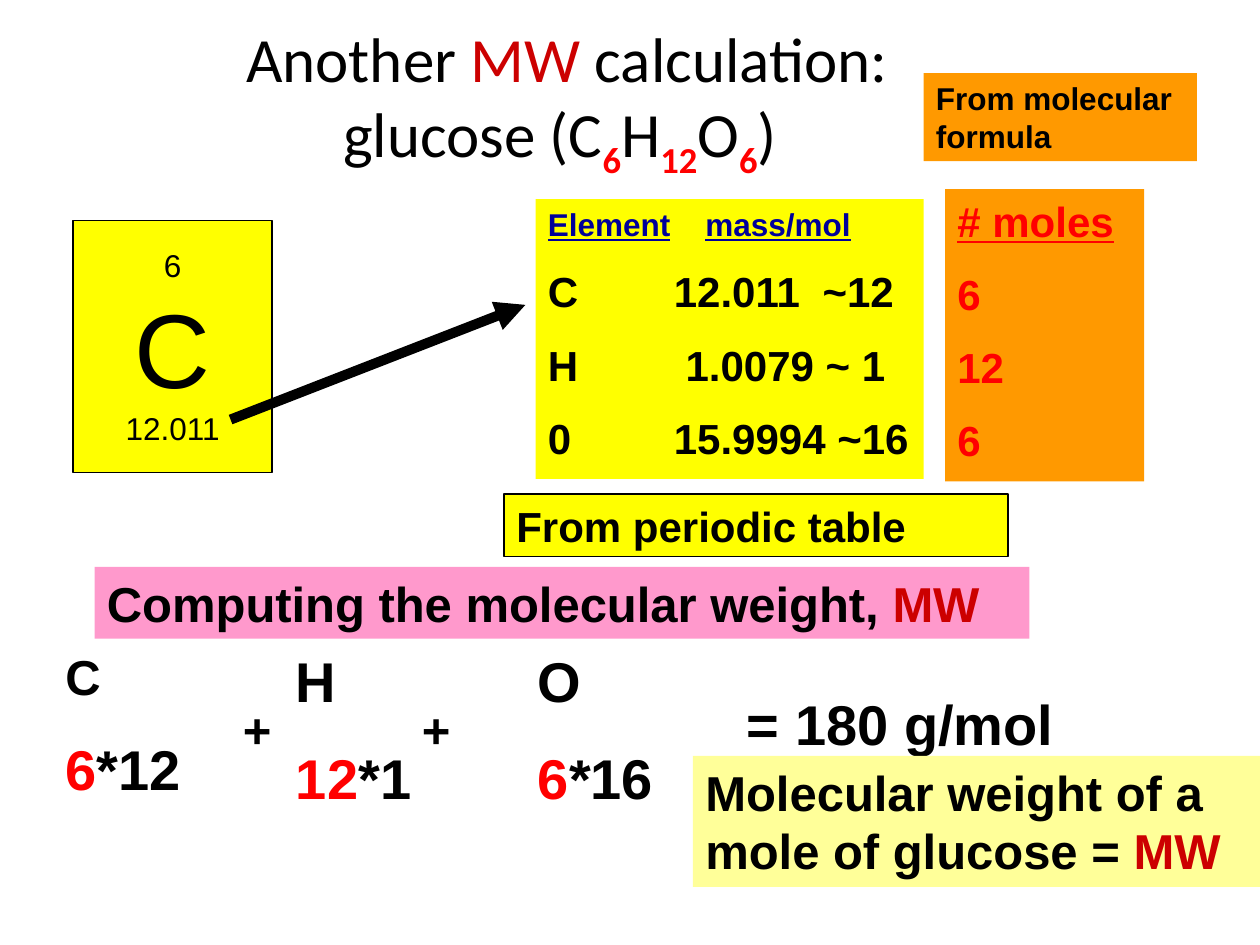
"""Build a slide that works out the molecular weight of glucose."""
from lxml import etree
from pptx import Presentation
from pptx import util as u
from pptx.dml.color import RGBColor
from pptx.enum import shapes, text
from pptx.oxml import ns

BLACK, RED, DARK_RED, NAVY = "000000", "FF0000", "CC0000", "000099"
YELLOW, ORANGE, PINK, CREAM = "FFFF00", "FF9900", "FF99CC", "FFFF99"
GAP_RATIO = 0.54

COUNT = {"color": RED, "bold": True, "baseline": -25000}
TITLE = [[("Another ", {}), ("MW", {"color": DARK_RED}),
          (" calculation:\vglucose (C", {}), ("6", COUNT), ("H", {}),
          ("12", COUNT), ("O", {}), ("6", COUNT), (") ", {})]]
MASSES = [
    [("Element\tmass/mol", {"size": 18, "color": NAVY, "underline": True})],
    [("C\t12.011\t~12", {})],
    [("H\t 1.0079 ~ 1", {})],
    [("0\t15.9994 ~16", {})],
]
MASS_TABS = [[1.25], [1, 2.18], [1], [1]]
MOLES = [[("# moles", {"underline": True})]] + [[(count, {})] for count in ("6", "12", "6")]
TILE = [[("6", {})], [("C", {"size": 60})], [("12.011", {})]]
TERMS = [
    ("C", 28, "6", "*12", (0.42, 4.58, 1.25, 1.92), 0.55),
    ("H", 32, "12", "*1", (2.25, 5.08, 1.25, 1.45), 0.05),
    ("O", 32, "6", "*16", (4.17, 5.08, 1.25, 1.45), 0.05),
]
PLUS_LEFTS = [3.25, 1.83]
MW = ("MW", {"color": DARK_RED})


def rgb(value):
    """Turn a hex string into a colour."""
    return RGBColor.from_string(value)


def set_tabs(paragraph, stops):
    """Give a paragraph its left tab stops, in inches."""
    tab_list = etree.SubElement(paragraph._p.get_or_add_pPr(), ns.qn("a:tabLst"))
    for stop in stops:
        etree.SubElement(tab_list, ns.qn("a:tab"), pos=str(u.Inches(stop)), algn="l")


def add_text(slide, box, paragraphs, size=24, font="Arial", color=BLACK, bold=True,
             fill=None, line=None, align="LEFT", anchor="TOP", wrap=True,
             top=0.05, tabs=()):
    """Add a box of formatted paragraphs, each a list of (text, format) runs."""
    place = [u.Inches(length) for length in box]
    if fill:
        shape = slide.shapes.add_shape(shapes.MSO_SHAPE.RECTANGLE, *place)
        shape.shadow.inherit = False
        shape.fill.solid()
        shape.fill.fore_color.rgb = rgb(fill)
        if line:
            shape.line.color.rgb = rgb(line)
            shape.line.width = u.Pt(0.75)
        else:
            shape.line.fill.background()
    else:
        shape = slide.shapes.add_textbox(*place)
    frame = shape.text_frame
    frame.word_wrap = wrap
    frame.margin_top = u.Inches(top)
    frame.vertical_anchor = getattr(text.MSO_ANCHOR, anchor)
    for index, runs in enumerate(paragraphs):
        paragraph = frame.add_paragraph() if index else frame.paragraphs[0]
        paragraph.alignment = getattr(text.PP_ALIGN, align)
        if index and align == "LEFT":
            largest = max(style.get("size", size) for _, style in runs)
            paragraph.space_before = u.Pt(round(largest * GAP_RATIO))
        if tabs:
            set_tabs(paragraph, tabs[index])
        for words, style in runs:
            for part_index, part in enumerate(words.split("\v")):
                if part_index:
                    paragraph.add_line_break()
                run = paragraph.add_run()
                run.text = part
                run.font.name = font
                run.font.size = u.Pt(style.get("size", size))
                run.font.bold = style.get("bold", bold)
                run.font.underline = style.get("underline", False)
                run.font.color.rgb = rgb(style.get("color", color))
                if "baseline" in style:
                    run._r.get_or_add_rPr().set("baseline", str(style["baseline"]))
    return shape


def add_arrow(slide, start, end, width):
    """Add a straight black arrow between two points."""
    points = [u.Inches(length) for length in start + end]
    arrow = slide.shapes.add_connector(shapes.MSO_CONNECTOR.STRAIGHT, *points)
    arrow.line.color.rgb = rgb(BLACK)
    arrow.line.width = u.Pt(width)
    etree.SubElement(arrow.line._get_or_add_ln(), ns.qn("a:tailEnd"), type="triangle")
    etree.SubElement(arrow._element.spPr, ns.qn("a:effectLst"))


def main():
    """Build and save the slide."""
    presentation = Presentation()
    presentation.slide_width, presentation.slide_height = u.Inches(10), u.Inches(7.5)
    slide = presentation.slides.add_slide(presentation.slide_layouts[6])

    add_text(slide, (0.25, 0.17, 8.5, 1.25), TITLE, size=36, font="Calibri",
             bold=False, align="CENTER", anchor="MIDDLE")
    add_text(slide, (4.25, 1.58, 3.08, 2.22), MASSES, fill=YELLOW, tabs=MASS_TABS)
    add_text(slide, (4, 3.92, 4, 0.5), [[("From periodic table", {})]],
             fill=YELLOW, line=BLACK)
    add_text(slide, (0.58, 1.75, 1.58, 2), TILE, size=18, bold=False, fill=YELLOW,
             line=BLACK, align="CENTER", anchor="MIDDLE", wrap=False)
    add_arrow(slide, (1.83, 3.33), (4.17, 2.42), 5.75)

    for element, size, count, factor, box, top in TERMS:
        product = [(count, {"color": RED}), (factor, {})]
        add_text(slide, box, [[(element, {"size": size})], product], size=32, top=top)

    add_text(slide, (7.5, 1.5, 1.58, 2.32), MOLES, color=RED, fill=ORANGE)
    add_text(slide, (7.33, 0.58, 2.17, 0.7), [[("From molecular formula", {})]],
             size=18, fill=ORANGE)
    for left in PLUS_LEFTS:
        add_text(slide, (left, 5.5, 0.33, 0.57), [[("+", {})]], size=28)
    add_text(slide, (5.83, 5.42, 2.83, 0.64), [[("= 180 g/mol", {})]], size=32)
    add_text(slide, (5.5, 6, 4.5, 1.04),
             [[("Molecular weight of a mole of glucose = ", {}), MW]], size=28, fill=CREAM)
    add_text(slide, (0.75, 4.5, 7.42, 0.57),
             [[("Computing the molecular weight, ", {}), MW]], size=28, fill=PINK)

    presentation.save("out.pptx")


if __name__ == "__main__":
    main()
